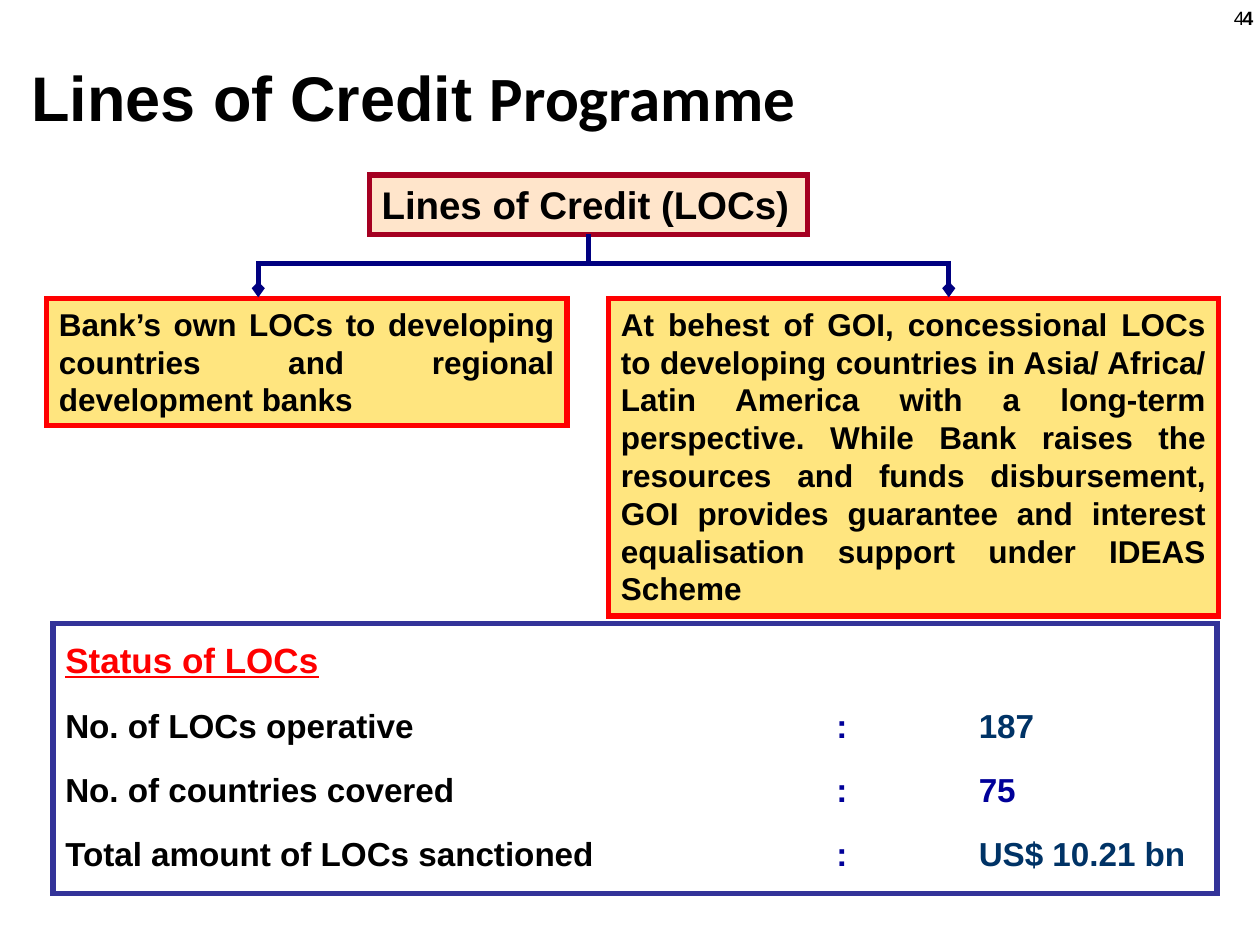
from lxml.etree import SubElement
from pptx import Presentation
from pptx.dml.color import RGBColor
from pptx.enum.shapes import MSO_CONNECTOR, MSO_SHAPE
from pptx.enum.text import MSO_ANCHOR, PP_ALIGN
from pptx.oxml.ns import qn
from pptx.util import Inches, Pt

BLACK = RGBColor(0x00, 0x00, 0x00)
WHITE = RGBColor(0xFF, 0xFF, 0xFF)
RED = RGBColor(0xFF, 0x00, 0x00)
CRIMSON = RGBColor(0xA5, 0x00, 0x21)
PEACH = RGBColor(0xFF, 0xCC, 0x99)
GOLD = RGBColor(0xFF, 0xCC, 0x00)
NAVY = RGBColor(0x00, 0x00, 0x80)
INDIGO = RGBColor(0x33, 0x33, 0x99)
BLUE = RGBColor(0x00, 0x00, 0x99)
TEAL = RGBColor(0x00, 0x33, 0x66)


def add_run(paragraph, text, size, color=BLACK, bold=True, name="Arial"):
    run = paragraph.add_run()
    run.text = text
    run.font.size = Pt(size)
    run.font.bold = bold
    run.font.name = name
    run.font.color.rgb = color
    return run


def add_box(left, top, width, height, fill, line):
    shape = slide.shapes.add_shape(
        MSO_SHAPE.RECTANGLE, Inches(left), Inches(top), Inches(width), Inches(height)
    )
    shape.shadow.inherit = False
    shape.fill.solid()
    shape.fill.fore_color.rgb = fill
    color = shape.fill._xPr.find(qn("a:solidFill"))[0]
    SubElement(color, qn("a:alpha"), val="50000")
    shape.line.color.rgb = line
    shape.line.width = Pt(3)
    SubElement(shape.line._get_or_add_ln(), qn("a:miter"), lim="800000")
    shape.text_frame.word_wrap = True
    shape.text_frame.vertical_anchor = MSO_ANCHOR.TOP
    shape.text_frame.paragraphs[0].alignment = PP_ALIGN.LEFT
    return shape


presentation = Presentation()
presentation.slide_width = Inches(10)
presentation.slide_height = Inches(7.5)
slide = presentation.slides.add_slide(presentation.slide_layouts[6])

for width, height, bold in [(0.53, 0.49, True), (0.39, 0.29, False)]:
    number = slide.shapes.add_textbox(Inches(9.64), 0, Inches(width), Inches(height))
    number.text_frame.word_wrap = False
    paragraph = number.text_frame.paragraphs[0]
    paragraph.alignment = PP_ALIGN.CENTER
    add_run(paragraph, "4", 11, bold=bold)

title = slide.shapes.add_textbox(Inches(0.25), Inches(0.25), Inches(8.64), Inches(0.82))
frame = title.text_frame
frame.word_wrap = True
frame.vertical_anchor = MSO_ANCHOR.BOTTOM
frame.margin_left = frame.margin_right = frame.margin_top = frame.margin_bottom = 0
frame.paragraphs[0].line_spacing = 0.9
add_run(frame.paragraphs[0], "Lines of Credit ", 36)
add_run(frame.paragraphs[0], "Programme", 36, name="Calibri")

root = add_box(2.93, 1.39, 3.48, 0.47, PEACH, CRIMSON)
add_run(root.text_frame.paragraphs[0], "Lines of Credit (LOCs)", 22)

branches = [
    (0.37, 4.13, 1.01,
     "Bank’s own LOCs to developing countries and regional development banks"),
    (4.83, 4.84, 2.52,
     "At behest of GOI, concessional LOCs to developing countries in Asia/ Africa/ "
     "Latin America with a long-term perspective. While Bank raises the resources "
     "and funds disbursement, GOI provides guarantee and interest equalisation "
     "support under IDEAS Scheme"),
]
for left, width, height, text in branches:
    branch = add_box(left, 2.37, width, height, GOLD, RED)
    paragraph = branch.text_frame.paragraphs[0]
    paragraph.alignment = PP_ALIGN.JUSTIFY
    add_run(paragraph, text, 18)

lines = [
    (4.67, 1.86, 4.67, 2.09, False),
    (2.05, 2.09, 7.55, 2.09, False),
    (2.05, 2.07, 2.05, 2.36, True),
    (7.53, 2.07, 7.53, 2.36, True),
]
for *ends, arrow in lines:
    connector = slide.shapes.add_connector(
        MSO_CONNECTOR.STRAIGHT, *[Inches(end) for end in ends]
    )
    connector.line.color.rgb = NAVY
    connector.line.width = Pt(3)
    if arrow:
        SubElement(
            connector.line._get_or_add_ln(), qn("a:tailEnd"),
            type="arrow", w="sm", len="sm",
        )
    elif ends[0] == ends[2]:
        connector.begin_connect(root, 2)
    SubElement(connector._element.spPr, qn("a:effectLst"))

status = add_box(0.42, 4.95, 9.24, 2.14, WHITE, INDIGO)
frame = status.text_frame
paragraph = frame.paragraphs[0]
paragraph.line_spacing = 1.2
add_run(paragraph, "Status of LOCs", 20, RED).font.underline = True

figures = [
    ("No. of LOCs operative", "187", TEAL),
    ("No. of countries covered", "75", BLUE),
    ("Total amount of LOCs sanctioned", "US$ 10.21 bn", TEAL),
]
for label, value, color in figures:
    paragraph = frame.add_paragraph()
    tabs = SubElement(paragraph._p.get_or_add_pPr(), qn("a:tabLst"))
    for position in (6.12, 7.25):
        SubElement(tabs, qn("a:tab"), pos=str(Inches(position)), algn="l")
    paragraph.alignment = PP_ALIGN.LEFT
    paragraph.line_spacing = 1.2
    paragraph.space_before = Pt(9.5)
    add_run(paragraph, label, 19)
    add_run(paragraph, "\t:\t", 19, BLUE)
    add_run(paragraph, value, 19, color)

presentation.save("out.pptx")
